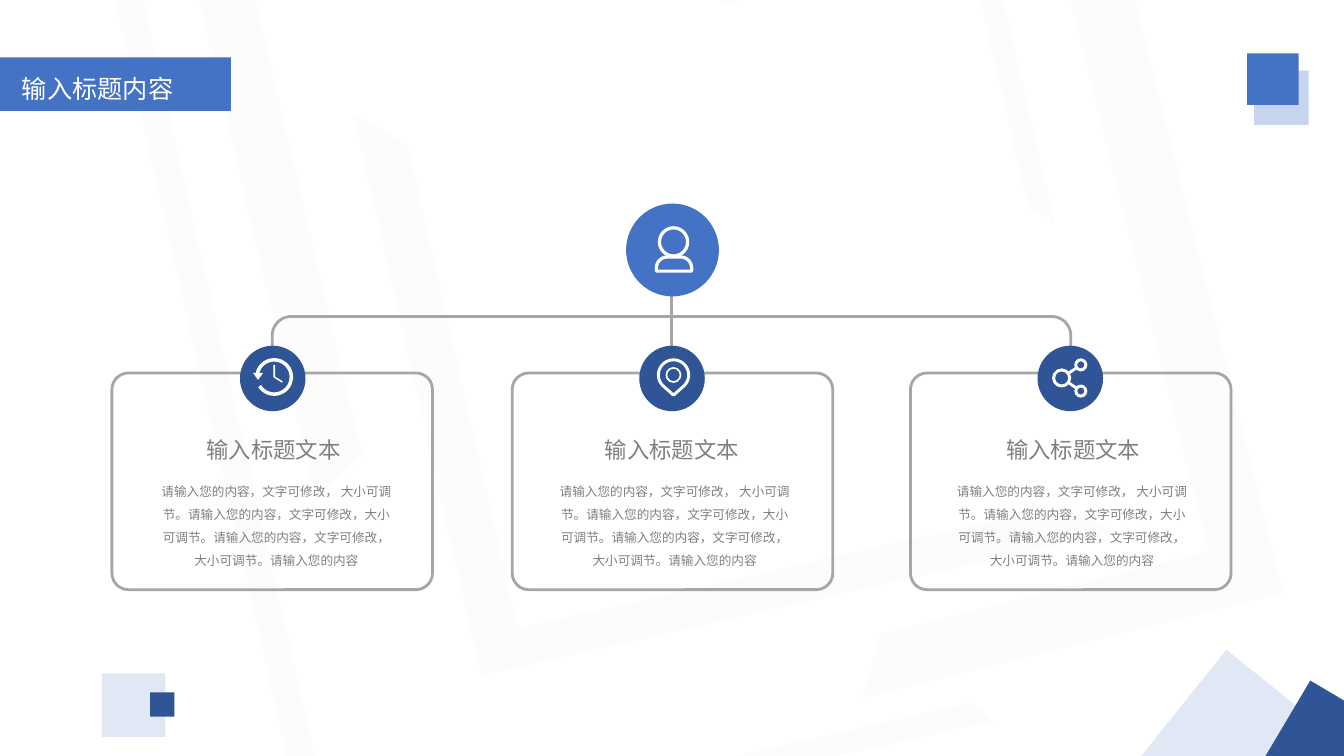
from math import cos, radians, sin

from lxml import etree
from pptx import Presentation
from pptx.dml.color import RGBColor
from pptx.enum.shapes import MSO_CONNECTOR, MSO_SHAPE
from pptx.enum.text import MSO_AUTO_SIZE, PP_ALIGN
from pptx.oxml.ns import qn
from pptx.util import Inches, Pt

RECT = MSO_SHAPE.RECTANGLE
OVAL = MSO_SHAPE.OVAL
CARD = MSO_SHAPE.ROUNDED_RECTANGLE
BANNER = MSO_SHAPE.PENTAGON
HALF_FRAME = MSO_SHAPE.HALF_FRAME
STRAIGHT = MSO_CONNECTOR.STRAIGHT
CENTER, JUSTIFY = PP_ALIGN.CENTER, PP_ALIGN.JUSTIFY

FONT = "Noto Sans CJK SC"
COLORS = {
    "blue": "4472C4",
    "navy": "2F5597",
    "pale": "C7D4ED",
    "gray": "A6A6A6",
    "text": "808080",
    "white": "FFFFFF",
}
PAGE_TITLE = "输入标题内容"
CARD_TITLE = "输入标题文本"
CARD_BODY = (
    "请输入您的内容，文字可修改， 大小可调节。请输入您的内容，文字可修改，"
    "大小可调节。请输入您的内容，文字可修改， 大小可调节。请输入您的内容"
)

# Left edges of the card, its badge, its title and its body
COLUMNS = [
    (1.11, 2.38, 1.85, 1.60),
    (5.08, 6.34, 5.80, 5.55),
    (9.03, 10.29, 9.78, 9.49),
]
# Box, rotation, mirrored, adjustments
BACKDROP_FRAMES = [
    ((4.42, 0, 5.7, 6.42), 257.2, False, (0.08, 0.065)),
    ((0.81, -0.06, 9.28, 6.9), 257.2, False, (0.039, 0.032)),
    ((7.24, -0.34, 3.01, 2.83), 77, False, (0.077, 0.052)),
    ((2.37, -1.66, 9.45, 5.61), 346.8, False, (0.091, 0.097)),
    ((5.83, 0.5, 7.74, 4.3), 75.9, True, (0.144, 0.134)),
]
# Left, top, side, rotation, colour, opacity
CORNER_SQUARES = [
    (12.44, 0.7, 0.54, 0, "pale", 100),
    (11.53, 6.75, 1.5, 308.7, "pale", 53),
    (1.01, 6.68, 0.63, 0, "pale", 53),
    (1.49, 6.87, 0.24, 0, "navy", 100),
    (12.37, 0.53, 0.51, 0, "blue", 100),
    (12.7, 6.92, 0.91, 300.7, "navy", 100),
]


def rgb(color):
    return RGBColor.from_string(COLORS[color])


def paint(shape, fill=None, line=None, width=2, opacity=100):
    shape.shadow.inherit = False
    if fill:
        shape.fill.solid()
        shape.fill.fore_color.rgb = rgb(fill)
        if opacity < 100:
            srgb = shape.element.spPr.find(".//" + qn("a:srgbClr"))
            etree.SubElement(srgb, qn("a:alpha"), val=str(opacity * 1000))
    else:
        shape.fill.background()
    if line:
        shape.line.color.rgb = rgb(line)
        shape.line.width = Pt(width)
    else:
        shape.line.fill.background()


def add_preset(slide, kind, box, adjustments=(), rotation=0, **style):
    shape = slide.shapes.add_shape(kind, *map(Inches, box))
    for index, value in enumerate(adjustments):
        shape.adjustments[index] = value
    shape.rotation = rotation
    paint(shape, **style)
    return shape


def add_circle(slide, center, radius, **style):
    x, y = center
    add_preset(slide, OVAL, (x - radius, y - radius, 2 * radius, 2 * radius), **style)


def add_outline(slide, points, close=False, **style):
    points = [(Inches(x), Inches(y)) for x, y in points]
    builder = slide.shapes.build_freeform(*points[0])
    builder.add_line_segments(points[1:], close=close)
    paint(builder.convert_to_shape(), **style)


def add_line(slide, start, end, color, width):
    line = slide.shapes.add_connector(STRAIGHT, *map(Inches, start + end))
    line.line.color.rgb = rgb(color)
    line.line.width = Pt(width)
    etree.SubElement(line.element.spPr, qn("a:effectLst"))


def add_text(slide, box, text, size, color, align, inset=True):
    frame = slide.shapes.add_textbox(*map(Inches, box)).text_frame
    frame.word_wrap = True
    if not inset:
        frame.margin_left = frame.margin_right = 0
        frame.margin_top = frame.margin_bottom = 0
        frame.auto_size = MSO_AUTO_SIZE.SHAPE_TO_FIT_TEXT
    paragraph = frame.paragraphs[0]
    paragraph.text = text
    paragraph.alignment = align
    run = paragraph.runs[0]
    run.font.size = Pt(size)
    run.font.name = FONT
    run.font.color.rgb = rgb(color)
    east_asian = etree.SubElement(run.font._element, qn("a:ea"))
    east_asian.set("typeface", FONT)
    return paragraph


def arc(center, radius, start, end, steps=32):
    """Points along an arc, in degrees clockwise from the right."""
    angles = [radians(start + (end - start) * i / steps) for i in range(steps + 1)]
    return [(center[0] + radius * cos(a), center[1] + radius * sin(a)) for a in angles]


def arch(left, top, right, bottom, radius):
    """Points of a bracket open at the bottom, with rounded upper corners."""
    shoulder = top + radius
    return [
        (left, bottom),
        *arc((left + radius, shoulder), radius, 180, 270),
        *arc((right - radius, shoulder), radius, 270, 360),
        (right, bottom),
    ]


def add_user_icon(slide):
    add_circle(slide, (6.68, 2.4), 0.14, line="white", width=2.3)
    body = arch(6.51, 2.55, 6.86, 2.69, 0.11)
    add_outline(slide, body, close=True, line="white", width=2.3)


def add_history_icon(slide):
    center = (2.72, 3.74)
    add_outline(slide, arc(center, 0.17, 192, 508), line="white", width=2.5)
    add_outline(slide, [(2.51, 3.7), (2.61, 3.7), (2.56, 3.77)], close=True, fill="white")
    hands = [(2.72, 3.62), center, (2.8, 3.79)]
    add_outline(slide, hands, line="white", width=1.1)


def add_pin_icon(slide):
    center = (6.68, 3.72)
    pin = arc(center, 0.15, 135, 405) + [(6.68, 3.92)]
    add_outline(slide, pin, close=True, line="white", width=2.1)
    add_circle(slide, center, 0.07, line="white", width=1.2)


def add_share_icon(slide):
    hub = (10.53, 3.75)
    nodes = [(10.72, 3.62), (10.72, 3.88)]
    for node in nodes:
        add_line(slide, hub, node, "white", 2)
    for center, radius in [(hub, 0.08), *((node, 0.05) for node in nodes)]:
        add_circle(slide, center, radius, fill="navy", line="white", width=2.1)


def add_decoration(slide):
    for box, rotation, mirrored, adjustments in BACKDROP_FRAMES:
        frame = add_preset(slide, HALF_FRAME, box, adjustments, rotation,
                           fill="gray", opacity=3)
        if mirrored:
            frame.element.spPr.find(qn("a:xfrm")).set("flipH", "1")
    for left, top, side, rotation, color, opacity in CORNER_SQUARES:
        add_preset(slide, RECT, (left, top, side, side), rotation=rotation,
                   fill=color, opacity=opacity)


def main():
    deck = Presentation()
    deck.slide_width, deck.slide_height = Inches(13.33), Inches(7.5)
    slide = deck.slides.add_slide(deck.slide_layouts[6])

    add_decoration(slide)
    add_preset(slide, BANNER, (0, 0.57, 2.29, 0.53), (0,), fill="blue")
    add_text(slide, (0.12, 0.68, 2.17, 0.43), PAGE_TITLE, 18, "white", JUSTIFY)

    add_outline(slide, arch(2.7, 3.14, 10.62, 3.7, 0.19), line="gray")
    add_line(slide, (6.66, 2.93), (6.66, 3.7), "gray", 2)
    add_preset(slide, OVAL, (6.21, 2.02, 0.92, 0.92), fill="blue")
    add_user_icon(slide)

    badge_icons = [add_history_icon, add_pin_icon, add_share_icon]
    for (card, badge, title, body), add_icon in zip(COLUMNS, badge_icons):
        add_preset(slide, CARD, (card, 3.7, 3.18, 2.15), (0.076,), line="gray")
        add_preset(slide, OVAL, (badge, 3.43, 0.65, 0.65), fill="navy")
        add_icon(slide)
        add_text(slide, (title, 4.33, 1.73, 0.27), CARD_TITLE, 16, "text", CENTER, inset=False)
        description = add_text(slide, (body, 4.73, 2.28, 0.91), CARD_BODY, 9, "text",
                               CENTER, inset=False)
        description.line_spacing = 1.5
        description.space_before = Pt(0.2)

    deck.save("out.pptx")


if __name__ == "__main__":
    main()
